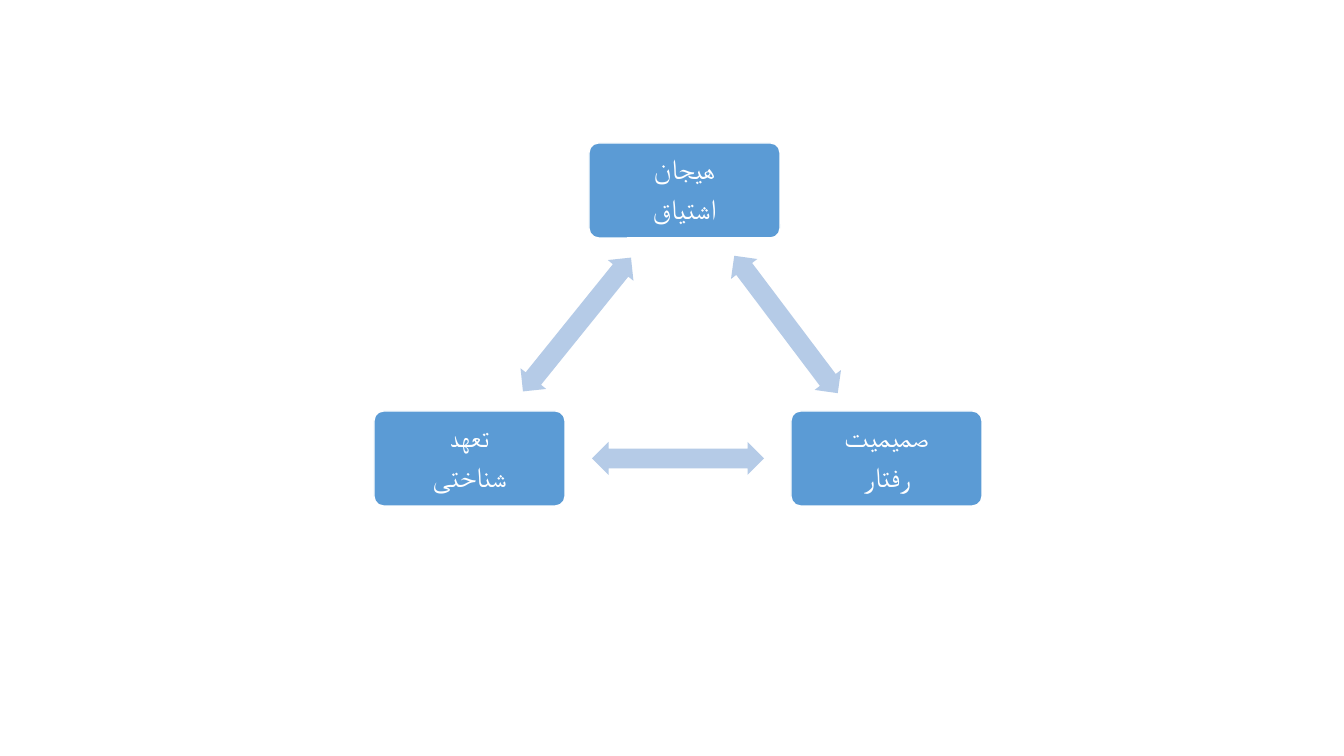
"""Build a slide with a triangle of three linked concepts."""
from pptx import Presentation
from pptx import util as u
from pptx.dml.color import RGBColor
from pptx.enum import shapes, text
from pptx.oxml.ns import qn
from lxml import etree

THEME = {
    "font": "Calibri",
    "size": 20,
    "box": RGBColor.from_string("5B9BD5"),
    "arrow": RGBColor.from_string("B5CBE7"),
    "white": RGBColor.from_string("FFFFFF"),
}
BOX_WIDTH, BOX_HEIGHT = 191, 95
ARROW_WIDTH, ARROW_HEIGHT = 172, 33
TEXT_MARGIN = 11


def px(length):
    return u.Emu(round(length * 914400 / 100.8))


def write_text(shape, content, *, size, color, font):
    frame = shape.text_frame
    frame.text = content
    frame.word_wrap = True
    frame.vertical_anchor = text.MSO_ANCHOR.MIDDLE
    frame.margin_left = frame.margin_right = px(TEXT_MARGIN)
    frame.margin_top = frame.margin_bottom = px(TEXT_MARGIN)
    for paragraph in frame.paragraphs:
        paragraph.alignment = text.PP_ALIGN.CENTER
        paragraph.line_spacing = 0.9
        paragraph.space_after = u.Pt(size * 0.35)
        paragraph._p.get_or_add_pPr().set("rtl", "1")
        for run in paragraph.runs:
            run.font.size = u.Pt(size)
            run.font.name = font
            run.font.color.rgb = color
            properties = run._r.get_or_add_rPr()
            etree.SubElement(properties, qn("a:cs")).set("typeface", font)


presentation = Presentation()
presentation.slide_width, presentation.slide_height = px(1344), px(756)
slide = presentation.slides.add_slide(presentation.slide_layouts[6])

concepts = [
    (589, 143, "هیجان\nاشتیاق"),
    (791, 411, "صمیمیت\nرفتار"),
    (374, 411, "تعهد\nشناختی"),
]
for left, top, content in concepts:
    box = slide.shapes.add_shape(
        shapes.MSO_SHAPE.ROUNDED_RECTANGLE,
        px(left), px(top), px(BOX_WIDTH), px(BOX_HEIGHT))
    box.adjustments[0] = 0.1
    box.shadow.inherit = False
    box.fill.solid()
    box.fill.fore_color.rgb = THEME["box"]
    box.line.color.rgb = THEME["white"]
    box.line.width = u.Pt(1)
    write_text(box, content, size=THEME["size"], color=THEME["white"],
               font=THEME["font"])

for left, top, rotation in [(700, 308, 53), (592, 442, 180), (491, 308, 308.9)]:
    arrow = slide.shapes.add_shape(
        shapes.MSO_SHAPE.LEFT_RIGHT_ARROW,
        px(left), px(top), px(ARROW_WIDTH), px(ARROW_HEIGHT))
    arrow.adjustments[0] = 0.6
    arrow.adjustments[1] = 0.5
    arrow.rotation = rotation
    arrow.shadow.inherit = False
    arrow.fill.solid()
    arrow.fill.fore_color.rgb = THEME["arrow"]
    arrow.line.fill.background()

presentation.save("out.pptx")
